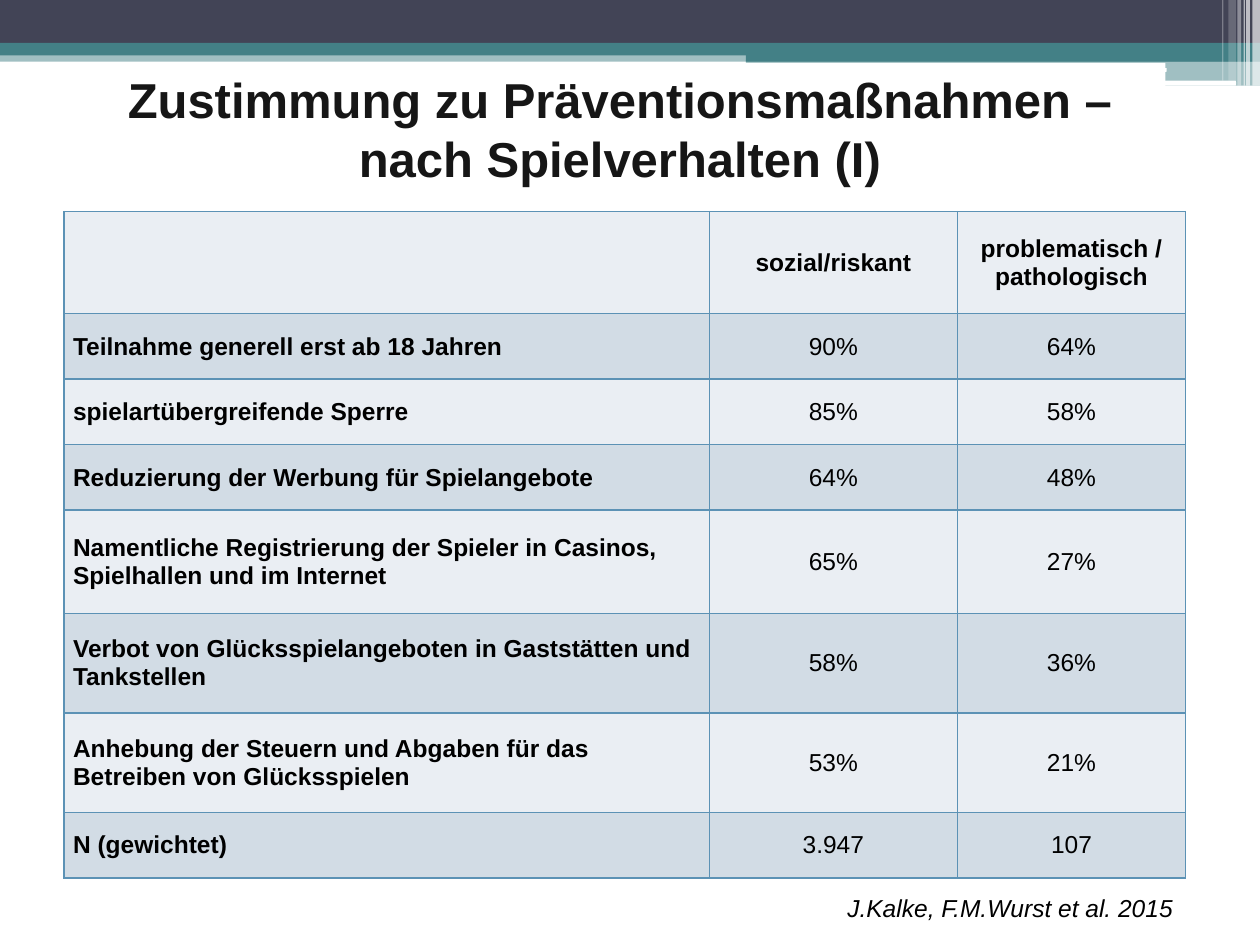
"""Build the slide on approval of prevention measures by gambling behaviour."""
import pptx
import pptx.dml.color
import pptx.enum.shapes
import pptx.enum.text
import pptx.oxml
import pptx.oxml.ns
import pptx.util
from pptx.util import Inches

RGBColor = pptx.dml.color.RGBColor
SHAPES = pptx.enum.shapes.MSO_SHAPE
ALIGN = pptx.enum.text.PP_ALIGN
MIDDLE = pptx.enum.text.MSO_ANCHOR.MIDDLE

TEAL = RGBColor(0x43, 0x80, 0x86)
SLATE = RGBColor(0x42, 0x44, 0x56)
WHITE = RGBColor(0xFF, 0xFF, 0xFF)
BLACK = RGBColor(0x00, 0x00, 0x00)
TITLE_INK = RGBColor(0x16, 0x16, 0x16)
ROW_FILLS = [RGBColor(0xEA, 0xEE, 0xF3), RGBColor(0xD2, 0xDC, 0xE5)]
BORDER = RGBColor(0x5C, 0x92, 0xB5)


def add_block(page, bounds, color, opacity=100, kind=SHAPES.RECTANGLE):
    block = page.shapes.add_shape(kind, *[Inches(length) for length in bounds])
    block.shadow.inherit = False
    block.fill.solid()
    block.fill.fore_color.rgb = color
    block.line.fill.background()
    if opacity < 100:
        tone = block.fill._xPr.find(".//" + pptx.oxml.ns.qn("a:srgbClr"))
        alpha = pptx.oxml.parse_xml(
            f'<a:alpha {pptx.oxml.ns.nsdecls("a")} val="{opacity * 1000}"/>')
        tone.append(alpha)
    return block


def add_span(para, text, size, color=BLACK, bold=False, italic=False):
    span = para.add_run()
    span.text = text
    span.font.name = "Arial"
    span.font.size = pptx.util.Pt(size)
    span.font.color.rgb = color
    span.font.bold = bold
    span.font.italic = italic


deck = pptx.Presentation()
deck.slide_width = Inches(10)
deck.slide_height = Inches(7.5)
page = deck.slides.add_slide(deck.slide_layouts[6])

for bounds, color, opacity in [
    ((0, 0.4, 10, 0.09), TEAL, 50),
    ((0, 0, 10, 0.34), SLATE, 100),
    ((0, 0.34, 10, 0.1), TEAL, 100),
    ((5.92, 0.39, 4.08, 0.1), TEAL, 100),
    ((5.92, 0.48, 4.08, 0.2), TEAL, 50),
]:
    add_block(page, bounds, color, opacity)

for bounds in [(5.91, 0.54, 3.35, 0.03), (8.06, 0.64, 1.75, 0.04)]:
    add_block(page, bounds, WHITE, kind=SHAPES.ROUNDED_RECTANGLE)

for left, width, height, opacity in [
    (9.94, 0.06, 0.68, 65),
    (9.89, 0.03, 0.68, 65),
    (9.87, 0.01, 0.68, 60),
    (9.82, 0.03, 0.68, 40),
    (9.75, 0.06, 0.64, 20),
    (9.7, 0.01, 0.64, 30),
]:
    add_block(page, (left, 0, width, height), WHITE, opacity)

title = add_block(page, (0.59, 0.5, 8.66, 1.04), WHITE)
title.text_frame.word_wrap = True
title.text_frame.vertical_anchor = MIDDLE
para = title.text_frame.paragraphs[0]
para.alignment = ALIGN.CENTER
add_span(para, "Zustimmung zu Präventionsmaßnahmen – nach Spielverhalten (I)",
         28, TITLE_INK, bold=True)

rows = [
    ("", "sozial/riskant", "problematisch /\npathologisch"),
    ("Teilnahme generell erst ab 18 Jahren", "90%", "64%"),
    ("spielartübergreifende Sperre", "85%", "58%"),
    ("Reduzierung der Werbung für Spielangebote", "64%", "48%"),
    ("Namentliche Registrierung der Spieler in Casinos, Spielhallen und im Internet",
     "65%", "27%"),
    ("Verbot von Glücksspielangeboten in Gaststätten und Tankstellen", "58%", "36%"),
    ("Anhebung der Steuern und Abgaben für das Betreiben von Glücksspielen",
     "53%", "21%"),
    ("N (gewichtet)", "3.947", "107"),
]
column_widths = [5.12, 1.97, 1.81]
row_heights = [0.81, 0.52, 0.52, 0.52, 0.82, 0.79, 0.79, 0.52]
table = page.shapes.add_table(len(rows), len(column_widths), Inches(0.51), Inches(1.68),
                              Inches(8.9), Inches(5.3)).table
for column, width in zip(table.columns, column_widths):
    column.width = Inches(width)

for row_index, (values, height) in enumerate(zip(rows, row_heights)):
    table.rows[row_index].height = Inches(height)
    for column_index, value in enumerate(values):
        cell = table.cell(row_index, column_index)
        cell.vertical_anchor = MIDDLE
        cell.margin_left = cell.margin_right = Inches(0.07)
        cell.margin_top = cell.margin_bottom = 0
        for side in ("lnL", "lnR", "lnT", "lnB"):
            cell._tc.get_or_add_tcPr().append(pptx.oxml.parse_xml(
                f'<a:{side} {pptx.oxml.ns.nsdecls("a")} w="12700"><a:solidFill>'
                f'<a:srgbClr val="{BORDER}"/></a:solidFill></a:{side}>'))
        cell.fill.solid()
        cell.fill.fore_color.rgb = ROW_FILLS[row_index % 2]
        if not value:
            continue
        for line_index, line in enumerate(value.split("\n")):
            frame = cell.text_frame
            para = frame.add_paragraph() if line_index else frame.paragraphs[0]
            para.alignment = ALIGN.CENTER if column_index else ALIGN.LEFT
            para.line_spacing = pptx.util.Pt(16)
            add_span(para, line, 14, bold=row_index == 0 or column_index == 0)

credit = page.shapes.add_textbox(Inches(5.08), Inches(7.04), Inches(4.33), Inches(0.34))
credit.text_frame.word_wrap = True
para = credit.text_frame.paragraphs[0]
para.alignment = ALIGN.RIGHT
add_span(para, "J.Kalke, F.M.Wurst et al. 2015", 14, italic=True)

deck.save("out.pptx")
